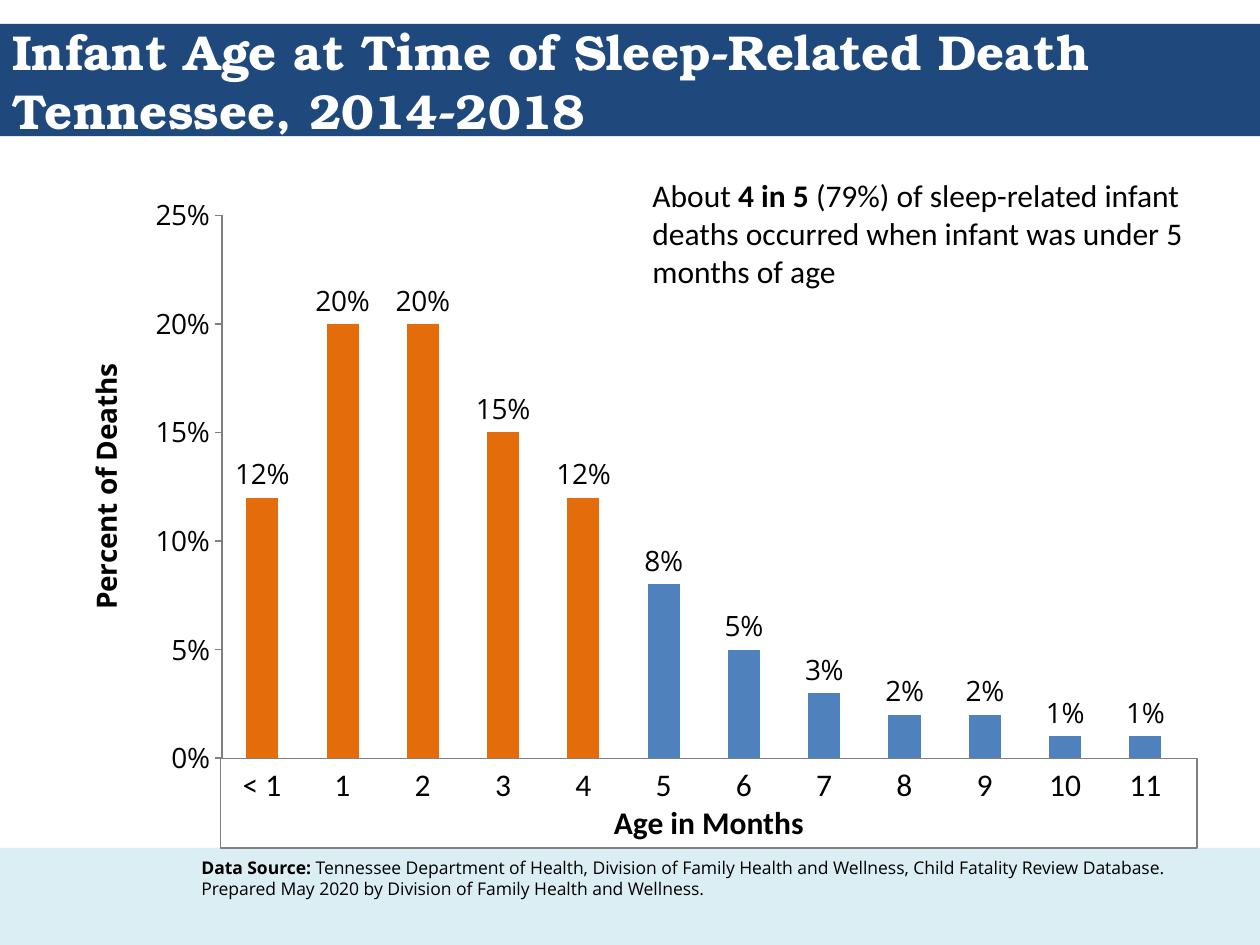
from dataclasses import dataclass

from lxml import etree
from pptx import Presentation
from pptx import util as u
from pptx.chart import data as chart_data
from pptx.dml.color import RGBColor
from pptx.enum import chart as charts, shapes, text
from pptx.oxml.ns import qn

BODY, LABEL, DISPLAY = "Calibri", "Open Sans", "TeX Gyre Bonum"
BLACK, WHITE, GRAY = "000000", "FFFFFF", "808080"
NAVY, PALE, BLUE, ORANGE = "1F497D", "DBEEF4", "4F81BD", "E46C0A"
AGES = ["< 1"] + [str(month) for month in range(1, 12)]
SHARES = [0.12, 0.20, 0.20, 0.15, 0.12, 0.08, 0.05, 0.03, 0.02, 0.02, 0.01, 0.01]
UNDER_FIVE_MONTHS = 5
PLOT = {"x": 0.134, "y": 0.061, "w": 0.866, "h": 0.907}


@dataclass(frozen=True)
class Box:
    left: float
    top: float
    width: float
    height: float

    def lengths(self) -> tuple:
        return tuple(u.Inches(v) for v in (self.left, self.top, self.width, self.height))


@dataclass(frozen=True)
class Style:
    font: str
    size: float
    color: str = BLACK


CHART = Box(0.58, 1.42, 8.83, 4.75)
AGE_BOX = Box(1.75, 6.02, 7.75, 0.71)
INSET = 0.1


def rgb(value: str) -> RGBColor:
    return RGBColor.from_string(value)


def set_font(font, style: Style, bold: bool = False) -> None:
    font.name, font.size, font.bold = style.font, u.Pt(style.size), bold
    font.color.rgb = rgb(style.color)


def add_run(paragraph, words: str, style: Style, bold: bool = False) -> None:
    run = paragraph.add_run()
    run.text = words
    set_font(run.font, style, bold)


def add_rectangle(slide, box: Box, fill: str = "", line: str = ""):
    shape = slide.shapes.add_shape(shapes.MSO_SHAPE.RECTANGLE, *box.lengths())
    shape.shadow.inherit = False
    if fill:
        shape.fill.solid()
        shape.fill.fore_color.rgb = rgb(fill)
    else:
        shape.fill.background()
    if line:
        shape.line.color.rgb = rgb(line)
        shape.line.width = u.Pt(0.75)
    else:
        shape.line.fill.background()
    return shape


def add_text(slide, box: Box, anchor=text.MSO_ANCHOR.TOP):
    frame = slide.shapes.add_textbox(*box.lengths()).text_frame
    frame.word_wrap = True
    frame.vertical_anchor = anchor
    return frame.paragraphs[0]


def add_title(slide) -> None:
    style = Style(DISPLAY, 28, WHITE)
    paragraph = add_text(slide, Box(0, 0.19, 10, 0.9), text.MSO_ANCHOR.MIDDLE)
    add_run(paragraph, "Infant Age at Time of Sleep-Related Death", style, True)
    paragraph.add_line_break()
    add_run(paragraph, "Tennessee, 2014-2018", style, True)


def place_plot(chart) -> None:
    area = chart._chartSpace.chart.plotArea
    for old in area.findall(qn("c:layout")):
        area.remove(old)
    layout = etree.Element(qn("c:layout"))
    manual = etree.SubElement(layout, qn("c:manualLayout"))
    settings = {"layoutTarget": "inner", "xMode": "edge", "yMode": "edge", **PLOT}
    for name, value in settings.items():
        etree.SubElement(manual, qn(f"c:{name}")).set("val", str(value))
    area.insert(0, layout)


def add_death_chart(slide) -> None:
    data = chart_data.CategoryChartData(number_format="0%")
    data.categories = [str(number) for number in range(1, 13)]
    data.add_series("Series 1", SHARES)
    kind = charts.XL_CHART_TYPE.COLUMN_CLUSTERED
    chart = slide.shapes.add_chart(kind, *CHART.lengths(), data).chart
    style = Style(LABEL, 16)
    set_font(chart.font, style)
    chart.has_legend = chart.has_title = False
    chart.category_axis.visible = False
    place_plot(chart)

    axis = chart.value_axis
    axis.minimum_scale, axis.maximum_scale, axis.major_unit = 0, 0.25, 0.05
    axis.has_major_gridlines = False
    axis.major_tick_mark = charts.XL_TICK_MARK.OUTSIDE
    axis.tick_labels.number_format = "0%"
    axis.tick_labels.number_format_is_linked = False
    axis.format.line.color.rgb = rgb(GRAY)
    add_run(axis.axis_title.text_frame.paragraphs[0], "Percent of Deaths", style, True)

    plot = chart.plots[0]
    plot.gap_width, plot.vary_by_categories = 150, False
    plot.has_data_labels = True
    labels = plot.data_labels
    labels.show_value = True
    labels.number_format, labels.number_format_is_linked = "0%", False
    labels.position = charts.XL_LABEL_POSITION.OUTSIDE_END
    set_font(labels.font, style)

    series = plot.series[0]
    series.format.fill.solid()
    series.format.fill.fore_color.rgb = rgb(BLUE)
    for index in range(UNDER_FIVE_MONTHS):
        fill = series.points[index].format.fill
        fill.solid()
        fill.fore_color.rgb = rgb(ORANGE)


def add_centered_tabs(paragraph) -> None:
    pitch = CHART.width * PLOT["w"] / len(AGES)
    start = CHART.left + CHART.width * PLOT["x"] - AGE_BOX.left - INSET
    tabs = etree.SubElement(paragraph._p.get_or_add_pPr(), qn("a:tabLst"))
    for index in range(len(AGES)):
        position = u.Inches(start + (index + 0.5) * pitch)
        etree.SubElement(tabs, qn("a:tab"), pos=str(int(position)), algn="ctr")


def add_age_labels(slide) -> None:
    frame = add_rectangle(slide, AGE_BOX, line=GRAY).text_frame
    frame.word_wrap = True
    style = Style(BODY, 18)
    ages = frame.paragraphs[0]
    ages.alignment = text.PP_ALIGN.LEFT
    add_centered_tabs(ages)
    add_run(ages, "".join(f"\t{age}" for age in AGES), style)
    caption = frame.add_paragraph()
    caption.alignment = text.PP_ALIGN.CENTER
    add_run(caption, "Age in Months", style, True)


def main() -> None:
    """Build the infant sleep-related death slide."""
    presentation = Presentation()
    presentation.slide_width, presentation.slide_height = u.Inches(10), u.Inches(7.5)
    slide = presentation.slides.add_slide(presentation.slide_layouts[6])
    add_rectangle(slide, Box(0, 0.19, 10, 0.89), NAVY)
    add_rectangle(slide, Box(0, 6.73, 10, 0.77), PALE)
    add_title(slide)

    source = add_text(slide, Box(1.5, 6.75, 8.33, 0.74))
    small = Style(LABEL, 10)
    add_run(source, "Data Source: ", small, True)
    add_run(source, "Tennessee Department of Health, Division of Family Health and "
            "Wellness, Child Fatality Review Database. Prepared May 2020 by "
            "Division of Family Health and Wellness.", small)

    add_death_chart(slide)
    add_age_labels(slide)

    finding = add_text(slide, Box(5.08, 1.35, 4.92, 1.01))
    large = Style(BODY, 18)
    add_run(finding, "About ", large)
    add_run(finding, "4 in 5 ", large, True)
    add_run(finding, "(79%) of sleep-related infant deaths occurred when infant "
            "was under 5 months of age", large)
    presentation.save("out.pptx")


if __name__ == "__main__":
    main()
